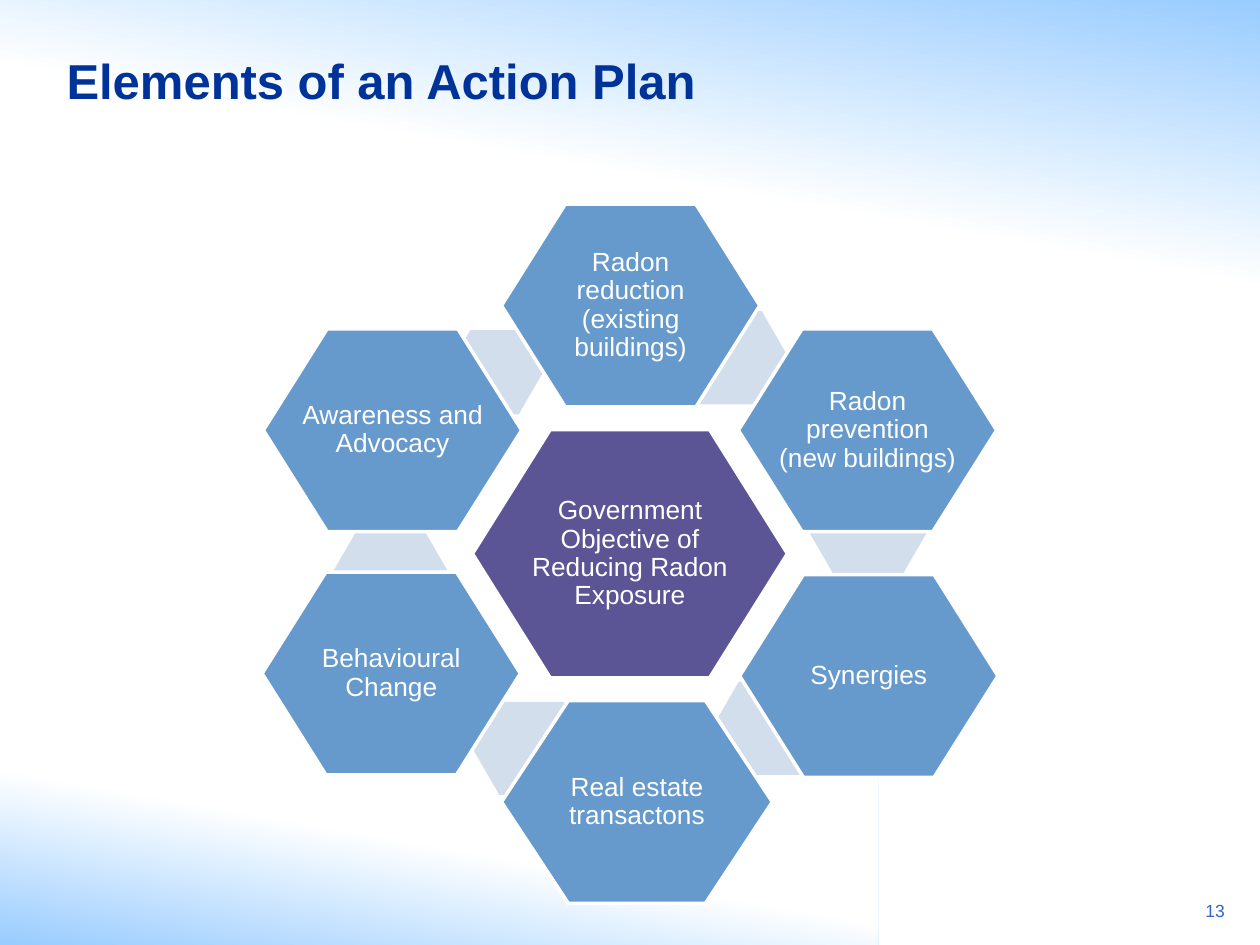
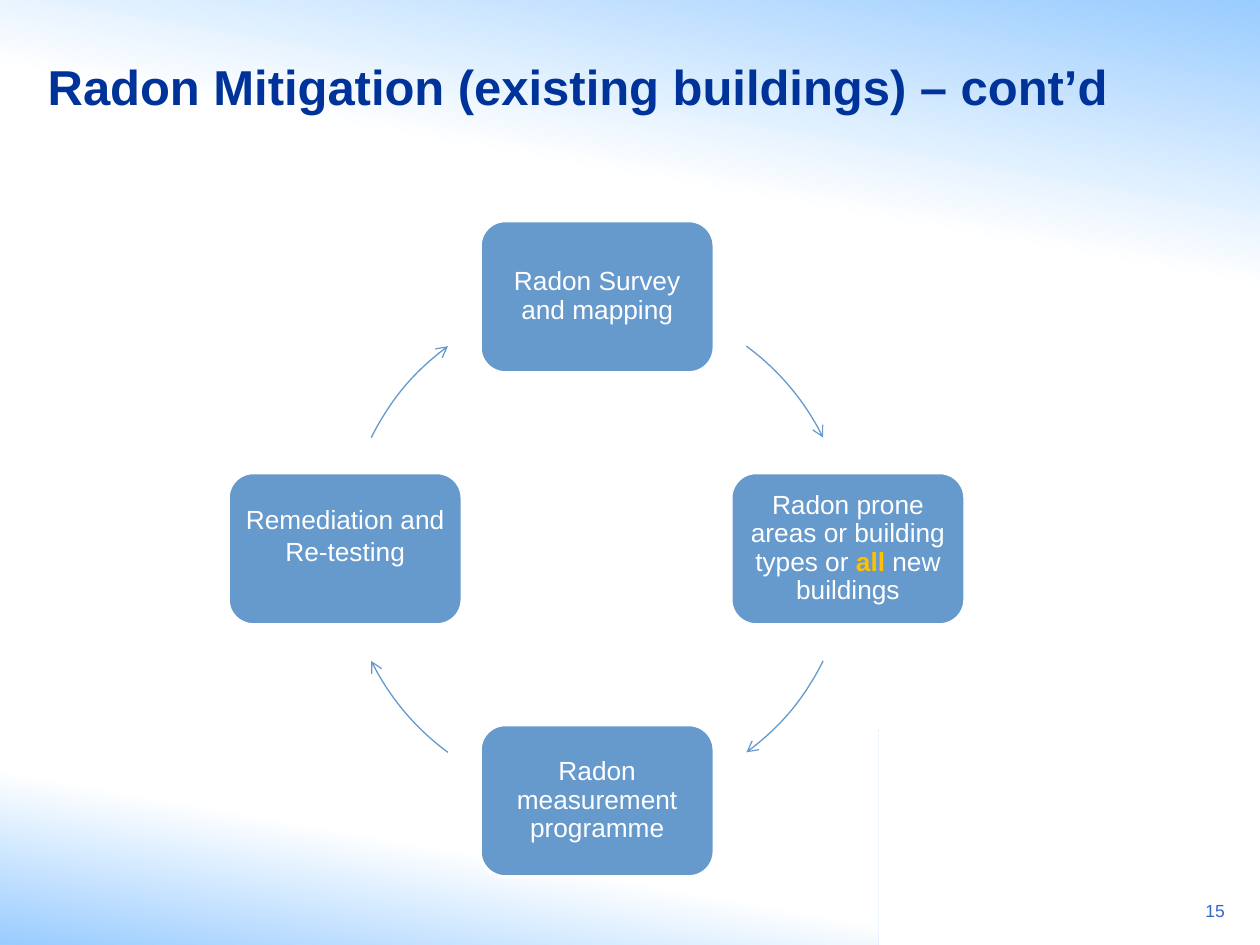
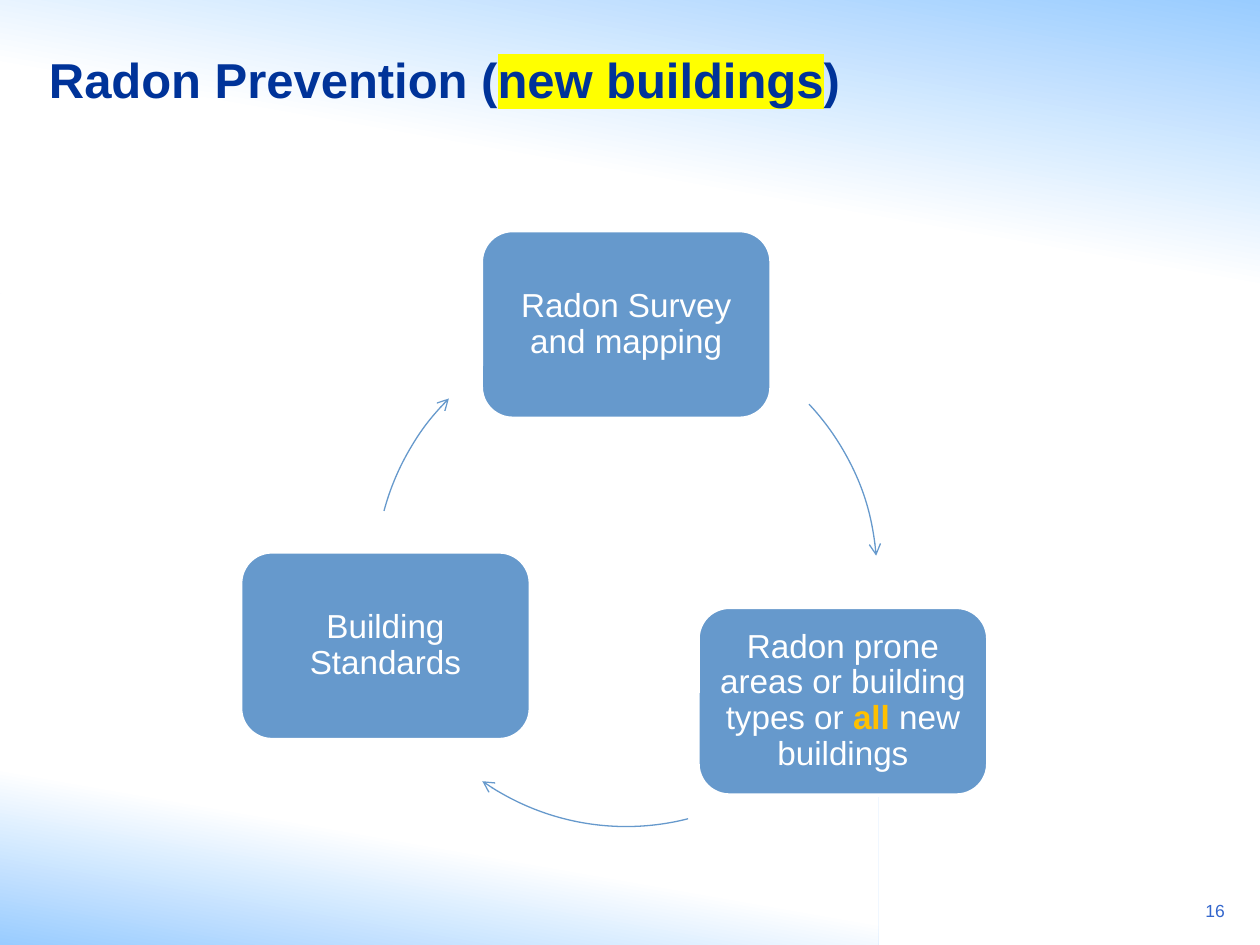
"""Build three radon action plan slides: a hexagon cluster and two cycles."""
from lxml import etree
from pptx import Presentation
from pptx.dml.color import RGBColor
from pptx.enum.shapes import MSO_SHAPE
from pptx.enum.text import MSO_ANCHOR, PP_ALIGN
from pptx.oxml.ns import qn
from pptx.util import Inches, Pt

RECTANGLE, ROUNDED = MSO_SHAPE.RECTANGLE, MSO_SHAPE.ROUNDED_RECTANGLE
HEXAGON, ARC = MSO_SHAPE.HEXAGON, MSO_SHAPE.ARC
TOP, MIDDLE = MSO_ANCHOR.TOP, MSO_ANCHOR.MIDDLE
LEFT, CENTER, RIGHT = PP_ALIGN.LEFT, PP_ALIGN.CENTER, PP_ALIGN.RIGHT

FONT = "Arial"
WHITE = RGBColor(0xFF, 0xFF, 0xFF)
SKY = RGBColor(0x99, 0xCC, 0xFF)
NAVY = RGBColor(0x00, 0x33, 0x99)
ROYAL = RGBColor(0x33, 0x66, 0xCC)
STEEL = RGBColor(0x66, 0x99, 0xCC)
MIST = RGBColor(0xD3, 0xDE, 0xEC)
PURPLE = RGBColor(0x5B, 0x55, 0x96)
AMBER = RGBColor(0xFF, 0xC0, 0x00)
HIGHLIGHT = "FFFF00"

SLIDE_WIDTH, SLIDE_HEIGHT = 10, 7.5
BANDS = [((0, 5.8, 6.97, 1.7), 80, 0.48), ((0, 0, SLIDE_WIDTH, 2.33), 260, 0.56)]
NUMBER_PLACE = (9.26, 7.09, 0.56, 0.32)
HEXAGON_CUT = 0.247
ARC_UNITS_PER_DEGREE = 0.6

SURVEY = ["Radon Survey and mapping"]
PRONE_AREAS = ["Radon prone areas or building types or ", ("all", "accent"), " new buildings"]

PLAN = {
    "title": ["Elements of an Action Plan"],
    "title_place": (0.43, 0.01, 7.99, 1.25),
    "number": 13,
    "bridge_size": (0.94, 0.74),
    "bridges": [(5.32, 2.47), (6.42, 3.85), (5.65, 5.41), (3.75, 5.57), (2.63, 4.19)],
    "small_bridge": (3.54, 2.62, 0.77, 0.67),
    "center": ("Government Objective of Reducing Radon Exposure", (3.75, 3.41, 2.5, 1.97)),
    "elements": [
        ("Radon reduction (existing buildings)", (3.98, 1.62, 2.05, 1.61)),
        ("Radon prevention (new buildings)", (5.86, 2.61, 2.05, 1.61)),
        ("Real estate transactons", (3.98, 5.56, 2.15, 1.61)),
        ("Synergies", (5.87, 4.56, 2.05, 1.61)),
        ("Awareness and Advocacy", (2.09, 2.61, 2.05, 1.61)),
        ("Behavioural Change", (2.08, 4.54, 2.05, 1.61)),
    ],
}

CYCLES = [
    {
        "title": ["Radon Mitigation (existing buildings) – cont’d"],
        "title_place": (0.28, 0.21, 8.95, 0.94),
        "number": 15,
        "step_size": (1.86, 1.21),
        "text_size": 15,
        "inset": 0.06,
        "steps": [
            (SURVEY, (3.81, 1.75), 0.9, 0),
            (PRONE_AREAS, (5.8, 3.75), 0.9, 0),
            (["Radon measurement programme"], (3.81, 5.75), 0.9, 0),
            (["Remediation and Re-testing"], (1.81, 3.75), 1.0, 0.22),
        ],
        "ring": (2.74, 2.36, 4, 4),
        "arcs": [(306.3, 333.7), (26.3, 53.7), (126.3, 153.7), (206.3, 233.7)],
    },
    {
        "title": ["Radon Prevention (", ("new buildings", "marked"), ")"],
        "title_place": (0.29, 0, 8.98, 1.25),
        "number": 16,
        "step_size": (2.3, 1.49),
        "text_size": 19,
        "inset": 0.08,
        "steps": [
            (SURVEY, (3.82, 1.83), 0.9, 0),
            (PRONE_AREAS, (5.54, 4.82), 0.9, 0),
            (["Building Standards"], (1.91, 4.38), 0.9, 0),
        ],
        "ring": (2.98, 2.58, 3.98, 3.98),
        "arcs": [(316.8, 355.4), (75.7, 125), (195, 225)],
    },
]


def inches(lengths):
    return [Inches(length) for length in lengths]


def paint(shape, fill=None, line=None, width=2):
    """Set fill and line, and drop the shadow."""
    shape.shadow.inherit = False
    if fill is None:
        shape.fill.background()
    else:
        shape.fill.solid()
        shape.fill.fore_color.rgb = fill
    if line is None:
        shape.line.fill.background()
    else:
        shape.line.color.rgb = line
        shape.line.width = Pt(width)


def write(shape, spans, size, color, align=LEFT, anchor=MIDDLE, bold=False,
          spacing=None, insets=(0.1, 0.05, 0.1, 0.05)):
    """Fill a shape with one paragraph of plain and styled spans."""
    frame = shape.text_frame
    frame.word_wrap = True
    frame.vertical_anchor = anchor
    (frame.margin_left, frame.margin_top,
     frame.margin_right, frame.margin_bottom) = inches(insets)
    para = frame.paragraphs[0]
    para.alignment = align
    para.line_spacing = spacing
    for part in spans:
        text, style = (part, None) if isinstance(part, str) else part
        span = para.add_run()
        span.text = text
        span.font.size = Pt(size)
        span.font.bold = bold or style == "accent"
        span.font.color.rgb = AMBER if style == "accent" else color
        span.font.name = FONT
        if style == "marked":
            mark = etree.Element(qn("a:highlight"))
            etree.SubElement(mark, qn("a:srgbClr"), val=HIGHLIGHT)
            span.font.fill._xPr.find(qn("a:solidFill")).addnext(mark)


def add_page(deck, content):
    """Add a slide with the shared bands, title and number."""
    page = deck.slides.add_slide(deck.slide_layouts[6])
    for place, angle, white_stop in BANDS:
        band = page.shapes.add_shape(RECTANGLE, *inches(place))
        paint(band)
        band.fill.gradient()
        band.fill.gradient_angle = angle
        for stop, color, position in zip(band.fill.gradient_stops, (SKY, WHITE), (0, white_stop)):
            stop.color.rgb = color
            stop.position = position
    title = page.shapes.add_textbox(*inches(content["title_place"]))
    write(title, content["title"], 28, NAVY, bold=True)
    number = page.shapes.add_textbox(*inches(NUMBER_PLACE))
    write(number, [str(content["number"])], 10, ROYAL, RIGHT, TOP)
    return page


def add_element(page, text, place, color, side, end):
    """Add a hexagon whose text area is its whole bounding box."""
    left, top, width, height = place
    cut, right, middle, bottom = HEXAGON_CUT * width, left + width, top + height / 2, top + height
    start, *corners = [inches(point) for point in (
        (left, middle), (left + cut, top), (right - cut, top),
        (right, middle), (right - cut, bottom), (left + cut, bottom))]
    builder = page.shapes.build_freeform(*start)
    builder.add_line_segments(corners, close=True)
    element = builder.convert_to_shape()
    paint(element, color, WHITE)
    write(element, [text], 15, WHITE, CENTER, spacing=0.9, insets=(side, end, side, end))


def add_arc_arrow(page, ring, angles):
    arrow = page.shapes.add_shape(ARC, *inches(ring))
    for index, angle in enumerate(angles):
        arrow.adjustments[index] = angle * ARC_UNITS_PER_DEGREE
    paint(arrow, line=STEEL, width=0.75)
    etree.SubElement(arrow.line._get_or_add_ln(), qn("a:tailEnd"), type="arrow")


def add_plan(deck, plan):
    page = add_page(deck, plan)
    places = [plan["small_bridge"]] + [corner + plan["bridge_size"] for corner in plan["bridges"]]
    for place in places:
        bridge = page.shapes.add_shape(HEXAGON, *inches(place))
        bridge.adjustments[0] = 0.289
        paint(bridge, MIST)
    add_element(page, *plan["center"], PURPLE, 0.36, 0.31)
    for text, place in plan["elements"]:
        add_element(page, text, place, STEEL, 0.3, 0.26)


def add_cycle(deck, cycle):
    page = add_page(deck, cycle)
    inset = cycle["inset"]
    for spans, corner, spacing, lift in cycle["steps"]:
        step = page.shapes.add_shape(ROUNDED, *inches(corner + cycle["step_size"]))
        paint(step, STEEL, WHITE)
        write(step, spans, cycle["text_size"], WHITE, CENTER, spacing=spacing,
              insets=(inset, inset, inset, inset + lift))
    for angles in cycle["arcs"]:
        add_arc_arrow(page, cycle["ring"], angles)


def main():
    deck = Presentation()
    deck.slide_width, deck.slide_height = inches((SLIDE_WIDTH, SLIDE_HEIGHT))
    add_plan(deck, PLAN)
    for cycle in CYCLES:
        add_cycle(deck, cycle)
    deck.save("out.pptx")


if __name__ == "__main__":
    main()
